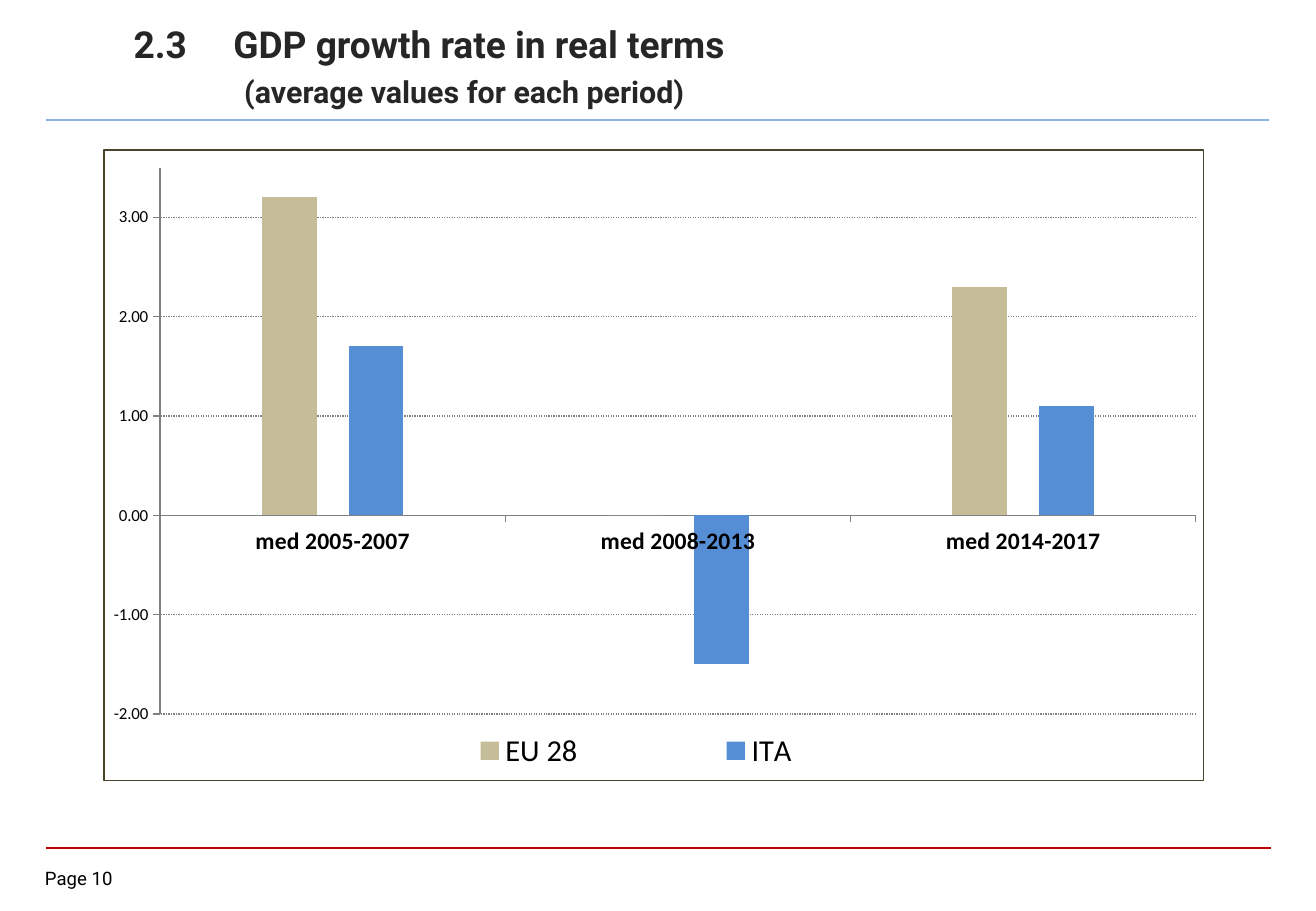
import dataclasses

import lxml.etree
import pptx
import pptx.chart.data
import pptx.dml.color
import pptx.enum.chart
import pptx.enum.dml
import pptx.enum.shapes
import pptx.enum.text
import pptx.oxml
import pptx.oxml.ns
import pptx.util

Inches = pptx.util.Inches
Pt = pptx.util.Pt
qn = pptx.oxml.ns.qn


@dataclasses.dataclass(frozen=True)
class Theme:
    heading_font: str = "Roboto"
    chart_font: str = "Calibri"
    heading: str = "262626"
    text: str = "000000"
    header_rule: str = "8EB4E3"
    footer_rule: str = "C00000"
    axis: str = "808080"
    frame: str = "4A452A"
    eu: str = "C4BD97"
    italy: str = "558ED5"
    heading_size: int = 22
    subheading_size: int = 18
    page_size: int = 11
    chart_size: int = 10
    period_size: int = 14
    legend_size: int = 18


THEME = Theme()
PERIODS = ["med 2005-2007", "med 2008-2013", "med 2014-2017"]
GROWTH = [
    ("EU 28", [3.2, 0, 2.3], THEME.eu),
    ("ITA", [1.7, -1.5, 1.1], THEME.italy),
]


def rgb(color):
    return pptx.dml.color.RGBColor.from_string(color)


def assign(target, values):
    for name, value in values.items():
        setattr(target, name, value)


def style_font(font, face, size, color, bold=False):
    assign(font, {"name": face, "size": Pt(size), "bold": bold})
    font.color.rgb = rgb(color)


def style_line(line, color, width):
    line.color.rgb = rgb(color)
    line.width = Pt(width)


def add_rule(slide, left, top, width, color, weight):
    rule = slide.shapes.add_connector(
        pptx.enum.shapes.MSO_CONNECTOR.STRAIGHT,
        Inches(left), Inches(top), Inches(left + width), Inches(top))
    style_line(rule.line, color, weight)
    lxml.etree.SubElement(rule._element.spPr, qn("a:effectLst"))


def place(shape, left, top, width, height):
    assign(shape, {"left": Inches(left), "top": Inches(top),
                   "width": Inches(width), "height": Inches(height)})


def add_header(slide, left, top, width, height):
    title = slide.shapes.title
    place(title, left, top, width, height)
    frame = title.text_frame
    assign(frame, {"word_wrap": True,
                   "auto_size": pptx.enum.text.MSO_AUTO_SIZE.NONE,
                   "vertical_anchor": pptx.enum.text.MSO_ANCHOR.TOP})
    frame.text = "2.3\tGDP growth rate in real terms\n(average values for each period)"
    heading, subheading = frame.paragraphs
    properties = heading._p.get_or_add_pPr()
    tabs = lxml.etree.SubElement(properties, qn("a:tabLst"))
    lxml.etree.SubElement(tabs, qn("a:tab"), pos=str(Inches(0.82)), algn="l")
    subheading._p.get_or_add_pPr().set("marL", str(Inches(0.91)))
    subheading.space_before = Pt(4)
    for paragraph, size in ((heading, THEME.heading_size),
                            (subheading, THEME.subheading_size)):
        paragraph.alignment = pptx.enum.text.PP_ALIGN.LEFT
        for run in paragraph.runs:
            style_font(run.font, THEME.heading_font, size, THEME.heading, True)
    add_rule(slide, 0.38, 0.99, 10.06, THEME.header_rule, 1.5)


def set_layout(parent, index, x, y, w, h, inner=False):
    for existing in parent.findall(qn("c:layout")):
        parent.remove(existing)
    layout = parent.makeelement(qn("c:layout"))
    parent.insert(index, layout)
    manual = lxml.etree.SubElement(layout, qn("c:manualLayout"))
    settings = [("layoutTarget", "inner")] if inner else []
    settings += [("xMode", "edge"), ("yMode", "edge"),
                 ("x", x), ("y", y), ("w", w), ("h", h)]
    for name, value in settings:
        lxml.etree.SubElement(manual, qn("c:" + name), val=str(value))


def frame_chart(chart):
    border = pptx.oxml.parse_xml(
        '<c:spPr xmlns:c="http://schemas.openxmlformats.org/drawingml/2006/chart"'
        ' xmlns:a="http://schemas.openxmlformats.org/drawingml/2006/main">'
        f'<a:noFill/><a:ln w="{Pt(0.75)}"><a:solidFill>'
        f'<a:srgbClr val="{THEME.frame}"/></a:solidFill></a:ln></c:spPr>')
    chart._chartSpace.find(qn("c:chart")).addnext(border)


def add_growth_chart(slide, left, top, width, height):
    data = pptx.chart.data.CategoryChartData(number_format="0.00")
    data.categories = PERIODS
    for name, values, _ in GROWTH:
        data.add_series(name, values)
    chart = slide.shapes.add_chart(
        pptx.enum.chart.XL_CHART_TYPE.COLUMN_CLUSTERED,
        Inches(left), Inches(top), Inches(width), Inches(height), data).chart
    assign(chart, {"has_title": False, "has_legend": True})
    style_font(chart.font, THEME.chart_font, THEME.chart_size, THEME.text)
    frame_chart(chart)

    columns = chart.plots[0]
    assign(columns, {"gap_width": 371, "overlap": -58, "vary_by_categories": False})
    for series, (_, _, color) in zip(columns.series, GROWTH):
        series.invert_if_negative = False
        series.format.fill.solid()
        series.format.fill.fore_color.rgb = rgb(color)

    periods, rates = chart.category_axis, chart.value_axis
    assign(rates, {"minimum_scale": -2, "maximum_scale": 3.5, "major_unit": 1,
                   "has_major_gridlines": True})
    assign(rates.tick_labels, {"number_format": "0.00",
                               "number_format_is_linked": False})
    for axis, size, bold in ((periods, THEME.period_size, True),
                             (rates, THEME.chart_size, False)):
        assign(axis, {"major_tick_mark": pptx.enum.chart.XL_TICK_MARK.OUTSIDE,
                      "minor_tick_mark": pptx.enum.chart.XL_TICK_MARK.NONE})
        style_font(axis.tick_labels.font, THEME.chart_font, size, THEME.text, bold)
        style_line(axis.format.line, THEME.axis, 0.75)
    gridlines = rates.major_gridlines.format.line
    style_line(gridlines, THEME.axis, 0.75)
    gridlines.dash_style = pptx.enum.dml.MSO_LINE.ROUND_DOT

    legend = chart.legend
    assign(legend, {"position": pptx.enum.chart.XL_LEGEND_POSITION.BOTTOM,
                    "include_in_layout": False})
    style_font(legend.font, THEME.chart_font, THEME.legend_size, THEME.text)
    set_layout(legend._element, 1, 0.216, 0.913, 0.536, 0.08)
    plot_area = chart._chartSpace.find(qn("c:chart")).find(qn("c:plotArea"))
    set_layout(plot_area, 0, 0.051, 0.028, 0.942, 0.867, inner=True)


def add_footer(slide, left, top, width, height):
    add_rule(slide, 0.38, 6.98, 10.08, THEME.footer_rule, 1)
    page = slide.shapes.add_textbox(
        Inches(left), Inches(top), Inches(width), Inches(height)).text_frame
    assign(page, {"margin_left": 0, "margin_top": 0, "margin_right": 0,
                  "margin_bottom": 0, "word_wrap": False})
    page.text = "Page 10"
    style_font(page.paragraphs[0].runs[0].font, THEME.heading_font,
               THEME.page_size, THEME.text)


def main():
    deck = pptx.Presentation()
    assign(deck, {"slide_width": Inches(10.83), "slide_height": Inches(7.5)})
    slide = deck.slides.add_slide(deck.slide_layouts.get_by_name("Title Only"))
    add_header(slide, 1, 0.13, 7.87, 0.79)
    add_growth_chart(slide, 0.85, 1.23, 9.06, 5.2)
    add_footer(slide, 0.37, 7.14, 0.73, 0.22)
    deck.save("out.pptx")


if __name__ == "__main__":
    main()
